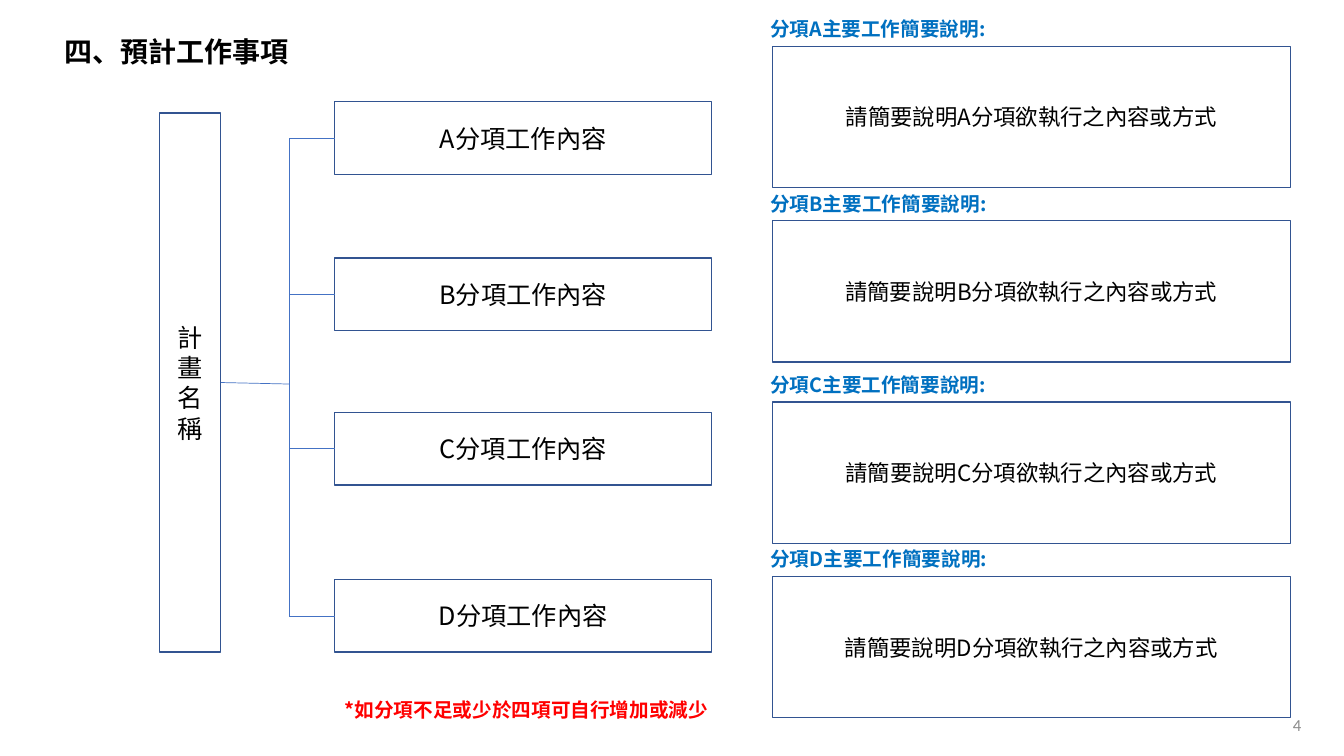
from dataclasses import dataclass

from pptx import Presentation
from pptx.dml.color import RGBColor
from pptx.enum.shapes import MSO_CONNECTOR, MSO_SHAPE
from pptx.enum.text import MSO_ANCHOR as Anchor, PP_ALIGN as Align
from pptx.oxml.ns import qn
from pptx.oxml.xmlchemy import OxmlElement
from pptx.shapes.autoshape import Shape
from pptx.shapes.connector import Connector
from pptx.slide import Slide
from pptx.util import Inches, Pt

CJK = "Noto Sans CJK SC"
BLACK, BLUE, RED, GREY = "000000", "0070C0", "FF0000", "8C8C8C"
BORDER, BRANCH = "325491", "4472C4"
SPINE_X = 2.87
TASK_X, TASK_W, TASK_H = 3.32, 3.74, 0.72
NOTE_X, NOTE_W, NOTE_H = 7.66, 5.14, 1.4
HEADING_X, HEADING_W, HEADING_H = 7.54, 2.59, 0.34


@dataclass
class WorkItem:
    letter: str
    task_y: float
    note_y: float

    @property
    def middle(self) -> float:
        return self.task_y + TASK_H / 2


ITEMS = [
    WorkItem("A", 1.01, 0.46),
    WorkItem("B", 2.56, 2.19),
    WorkItem("C", 4.09, 3.99),
    WorkItem("D", 5.75, 5.72),
]


def rgb(color: str) -> RGBColor:
    return RGBColor.from_string(color)


def write(shape: Shape, text: str, size: float, color: str = BLACK, bold: bool = False,
          align: Align = Align.LEFT, anchor: Anchor = Anchor.TOP,
          font: str = CJK, wrap: bool = True) -> None:
    tf = shape.text_frame
    tf.word_wrap = wrap
    tf.vertical_anchor = anchor
    p = tf.paragraphs[0]
    p.text = text
    p.alignment = align
    p.font.name = font
    p.font.size = Pt(size)
    p.font.bold = bold
    p.font.color.rgb = rgb(color)
    east_asian = OxmlElement("a:ea")
    east_asian.set("typeface", font)
    p._p.pPr.find(qn("a:defRPr")).find(qn("a:latin")).addnext(east_asian)


def add_box(s: Slide, x: float, y: float, w: float, h: float, text: str, size: float) -> Shape:
    box = s.shapes.add_shape(MSO_SHAPE.RECTANGLE, Inches(x), Inches(y), Inches(w), Inches(h))
    box.shadow.inherit = False
    box.fill.background()
    box.line.color.rgb = rgb(BORDER)
    box.line.width = Pt(1)
    write(box, text, size, align=Align.CENTER, anchor=Anchor.MIDDLE)
    return box


def add_label(s: Slide, x: float, y: float, w: float, h: float, text: str,
              size: float, color: str, **style) -> None:
    label = s.shapes.add_textbox(Inches(x), Inches(y), Inches(w), Inches(h))
    write(label, text, size, color, **style)


def add_line(s: Slide, x1: float, y1: float, x2: float, y2: float) -> Connector:
    line = s.shapes.add_connector(MSO_CONNECTOR.STRAIGHT,
                                  Inches(x1), Inches(y1), Inches(x2), Inches(y2))
    line.line.color.rgb = rgb(BRANCH)
    line.line.width = Pt(0.5)
    line._element.spPr.append(OxmlElement("a:effectLst"))
    return line


def add_title(s: Slide, text: str) -> None:
    title = s.shapes.title
    title.left, title.top = Inches(0.54), Inches(0.29)
    title.width, title.height = Inches(2.45), Inches(0.44)
    write(title, text, 20, bold=True, wrap=False)


def main() -> None:
    prs = Presentation()
    prs.slide_width, prs.slide_height = Inches(13.33), Inches(7.5)
    s = prs.slides.add_slide(prs.slide_layouts[5])

    add_title(s, "四、預計工作事項")
    plan = add_box(s, 1.58, 1.12, 0.61, 5.35, "計畫名稱", 18)
    add_line(s, 2.19, 3.79, SPINE_X, 3.81).begin_connect(plan, 3)
    add_line(s, SPINE_X, ITEMS[0].middle, SPINE_X, ITEMS[-1].middle)

    for item in ITEMS:
        task = add_box(s, TASK_X, item.task_y, TASK_W, TASK_H, f"{item.letter}分項工作內容", 18)
        add_line(s, SPINE_X, item.middle, TASK_X, item.middle).end_connect(task, 1)
        add_box(s, NOTE_X, item.note_y, NOTE_W, NOTE_H,
                f"請簡要說明{item.letter}分項欲執行之內容或方式", 16)
        add_label(s, HEADING_X, item.note_y - HEADING_H, HEADING_W, HEADING_H,
                  f"分項{item.letter}主要工作簡要說明:", 14, BLUE, bold=True)

    add_label(s, TASK_X, 6.87, 4.37, 0.34, "*如分項不足或少於四項可自行增加或減少", 14, RED, bold=True)
    add_label(s, 12, 6.99, 1.73, 0.4, "4", 12, GREY, font="Calibri",
              align=Align.CENTER, anchor=Anchor.MIDDLE)
    prs.save("out.pptx")


if __name__ == "__main__":
    main()
